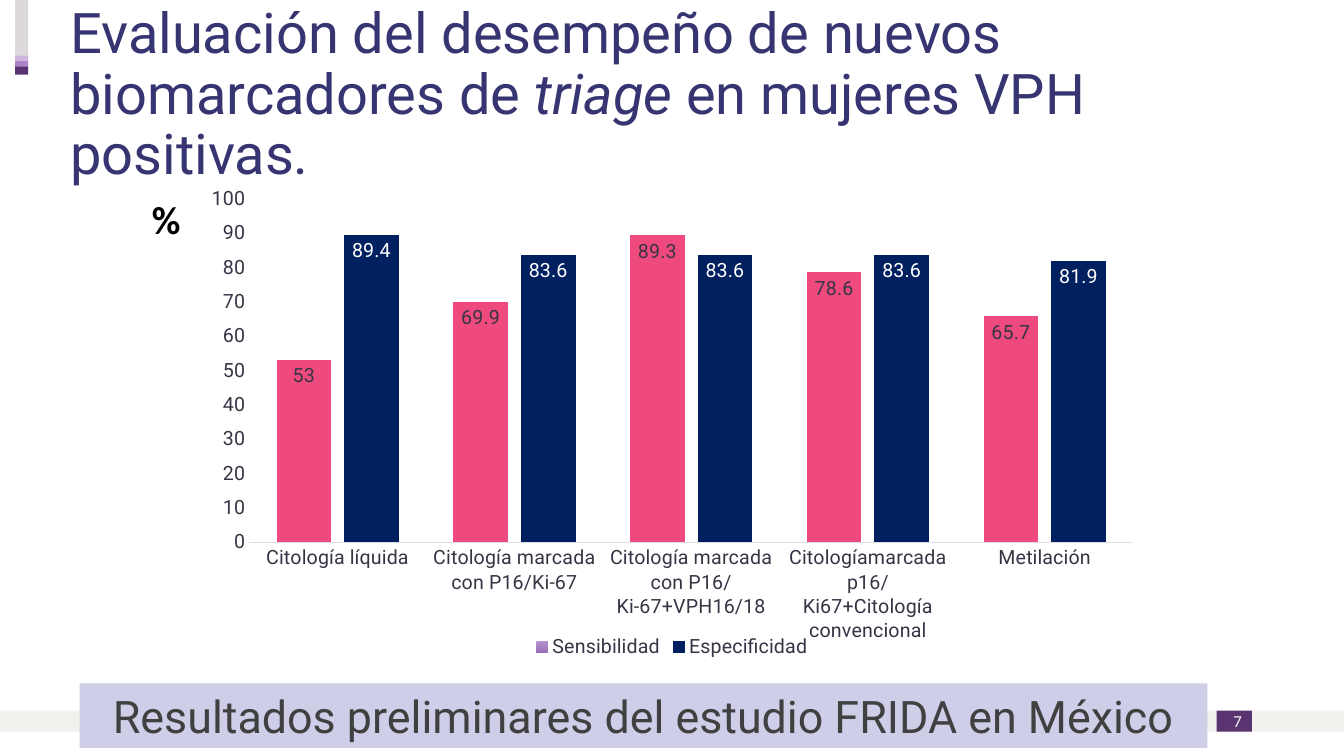
from dataclasses import dataclass

from lxml import etree
from pptx import Presentation
from pptx.chart.data import CategoryChartData
from pptx.dml.color import RGBColor
from pptx.enum.chart import XL_CHART_TYPE, XL_LABEL_POSITION, XL_LEGEND_POSITION, XL_TICK_MARK
from pptx.enum.shapes import MSO_SHAPE
from pptx.enum.text import MSO_ANCHOR, MSO_AUTO_SIZE, PP_ALIGN
from pptx.oxml.ns import qn
from pptx.util import Cm, Pt

COLUMNS = XL_CHART_TYPE.COLUMN_CLUSTERED
INSIDE_END = XL_LABEL_POSITION.INSIDE_END
LEGEND_BOTTOM = XL_LEGEND_POSITION.BOTTOM
NO_TICK = XL_TICK_MARK.NONE
RECTANGLE = MSO_SHAPE.RECTANGLE
MIDDLE = MSO_ANCHOR.MIDDLE
NO_AUTOFIT = MSO_AUTO_SIZE.NONE
LEFT, CENTER, RIGHT = PP_ALIGN.LEFT, PP_ALIGN.CENTER, PP_ALIGN.RIGHT
TITLE_ONLY = 5

CATEGORIES = [
    "Citología líquida",
    "Citología marcada con P16/Ki-67",
    "Citología marcada con P16/Ki-67+VPH16/18",
    "Citologíamarcada p16/Ki67+Citología convencional",
    "Metilación",
]
SENSITIVITY = [53, 69.9, 89.3, 78.6, 65.7]
SPECIFICITY = [89.4, 83.6, 83.6, 83.6, 81.9]
PLOT_AREA = {"x": 0.06, "y": 0.04, "w": 0.92, "h": 0.71}


@dataclass(frozen=True)
class Theme:
    font: str = "Roboto"
    small_font: str = "Calibri"
    title: str = "373472"
    chart_text: str = "373545"
    banner_text: str = "404040"
    black: str = "000000"
    white: str = "FFFFFF"
    page_number: str = "F2F2F2"
    banner: str = "CFCEE9"
    footer: str = "F2F1EE"
    grey: str = "DCD8DC"
    lavender: str = "CEB5DD"
    purple: str = "AD84C6"
    dark_purple: str = "5A3471"
    axis: str = "DFDEE6"
    gradient: tuple = ("B693CD", "9B6EB7")
    pink: str = "EF4A7E"
    navy: str = "002060"
    title_size: int = 40
    banner_size: int = 32
    unit_size: int = 28
    chart_size: int = 14
    number_size: int = 12


def set_font(font, name, size, color, bold=None):
    font.name = name
    font.size = Pt(size)
    font.color.rgb = RGBColor.from_string(color)
    font.bold = bold


def set_fill(fill, color):
    fill.solid()
    fill.fore_color.rgb = RGBColor.from_string(color)


def place_plot(chart, area):
    """Fix the inner plot area to fractions of the chart space."""
    plot_area = chart.element.find(qn("c:chart")).find(qn("c:plotArea"))
    for layout in plot_area.findall(qn("c:layout")):
        plot_area.remove(layout)
    layout = etree.Element(qn("c:layout"))
    manual = etree.SubElement(layout, qn("c:manualLayout"))
    settings = {"layoutTarget": "inner", "xMode": "edge", "yMode": "edge", **area}
    for tag, value in settings.items():
        etree.SubElement(manual, qn(f"c:{tag}")).set("val", str(value))
    plot_area.insert(0, layout)


class SlideBuilder:
    def __init__(self, slide, theme):
        self.slide = slide
        self.theme = theme

    def title(self, runs, left, top, width, height):
        """Fill the title from (text, italic) pairs."""
        title = self.slide.shapes.title
        title.left, title.top = Cm(left), Cm(top)
        title.width, title.height = Cm(width), Cm(height)
        frame = title.text_frame
        frame.auto_size = NO_AUTOFIT
        frame.vertical_anchor = MIDDLE
        paragraph = frame.paragraphs[0]
        paragraph.alignment = LEFT
        paragraph.line_spacing = 0.9
        set_font(paragraph.font, self.theme.font, self.theme.title_size, self.theme.title)
        for text, italic in runs:
            run = paragraph.add_run()
            run.text = text
            run.font.italic = italic

    def rectangle(self, color, left, top, width, height):
        shape = self.slide.shapes.add_shape(RECTANGLE, Cm(left), Cm(top), Cm(width), Cm(height))
        shape.shadow.inherit = False
        set_fill(shape.fill, color)
        shape.line.fill.background()
        return shape

    def set_text(self, shape, text, font, size, color, alignment, bold=None, wrap=True):
        frame = shape.text_frame
        frame.word_wrap = wrap
        frame.vertical_anchor = MIDDLE
        paragraph = frame.paragraphs[0]
        paragraph.text = text
        paragraph.alignment = alignment
        set_font(paragraph.font, font, size, color, bold)

    def text_box(self, left, top, width, height, *text_style, **options):
        box = self.slide.shapes.add_textbox(Cm(left), Cm(top), Cm(width), Cm(height))
        self.set_text(box, *text_style, **options)

    def label(self, series, color):
        labels = series.data_labels
        labels.show_value = True
        labels.position = INSIDE_END
        set_font(labels.font, self.theme.font, self.theme.chart_size, color)

    def column_chart(self, left, top, width, height):
        theme = self.theme
        data = CategoryChartData()
        data.categories = CATEGORIES
        data.add_series("Sensibilidad", SENSITIVITY)
        data.add_series("Especificidad", SPECIFICITY)
        frame = self.slide.shapes.add_chart(
            COLUMNS, Cm(left), Cm(top), Cm(width), Cm(height), data)
        chart = frame.chart
        chart.has_title = False
        set_font(chart.font, theme.font, theme.chart_size, theme.chart_text)
        chart.has_legend = True
        chart.legend.position = LEGEND_BOTTOM
        chart.legend.include_in_layout = False

        for axis in (chart.category_axis, chart.value_axis):
            axis.major_tick_mark = axis.minor_tick_mark = NO_TICK
            axis.has_major_gridlines = False
        category_line = chart.category_axis.format.line
        category_line.color.rgb = RGBColor.from_string(theme.axis)
        category_line.width = Pt(0.75)
        value_axis = chart.value_axis
        value_axis.format.line.fill.background()
        value_axis.minimum_scale, value_axis.maximum_scale = 0, 100
        value_axis.major_unit = 10

        plot = chart.plots[0]
        plot.gap_width, plot.overlap = 100, -24
        plot.vary_by_categories = False
        sensitivity, specificity = plot.series
        legend_fill = sensitivity.format.fill
        legend_fill.gradient()
        legend_fill.gradient_angle = 270
        for stop, color in zip(legend_fill.gradient_stops, theme.gradient):
            stop.color.rgb = RGBColor.from_string(color)
        for index in range(len(CATEGORIES)):
            set_fill(sensitivity.points[index].format.fill, theme.pink)
        set_fill(specificity.format.fill, theme.navy)
        self.label(sensitivity, theme.chart_text)
        self.label(specificity, theme.white)
        place_plot(chart, PLOT_AREA)


def main():
    presentation = Presentation()
    presentation.slide_width, presentation.slide_height = Cm(33.87), Cm(19.05)
    slide = presentation.slides.add_slide(presentation.slide_layouts[TITLE_ONLY])
    theme = Theme()
    builder = SlideBuilder(slide, theme)

    builder.rectangle(theme.footer, 0, 17.91, 33.87, 0.53)
    builder.rectangle(theme.dark_purple, 30.66, 17.91, 0.89, 0.53)
    builder.rectangle(theme.grey, 0.38, 0, 0.33, 1.52)
    for index, color in enumerate((theme.lavender, theme.purple, theme.dark_purple)):
        builder.rectangle(color, 0.38, 1.4 + 0.14 * index, 0.33, 0.2)

    builder.column_chart(4.83, 4.52, 24.21, 12.19)
    builder.title([
        ("Evaluación del desempeño de nuevos biomarcadores de ", False),
        ("triage", True),
        (" en mujeres VPH positivas.", False),
    ], 1.52, 0.58, 31.12, 3.68)
    banner = builder.rectangle(theme.banner, 2.01, 17.22, 28.42, 1.63)
    builder.set_text(banner, "Resultados preliminares del estudio FRIDA en México",
                     theme.font, theme.banner_size, theme.banner_text, CENTER)
    builder.text_box(23.93, 17.65, 7.62, 1.02, "7",
                     theme.small_font, theme.number_size, theme.page_number, RIGHT)
    builder.text_box(3.58, 4.78, 1.24, 1.45, "%", theme.small_font,
                     theme.unit_size, theme.black, LEFT, bold=True, wrap=False)
    presentation.save("out.pptx")


if __name__ == "__main__":
    main()
